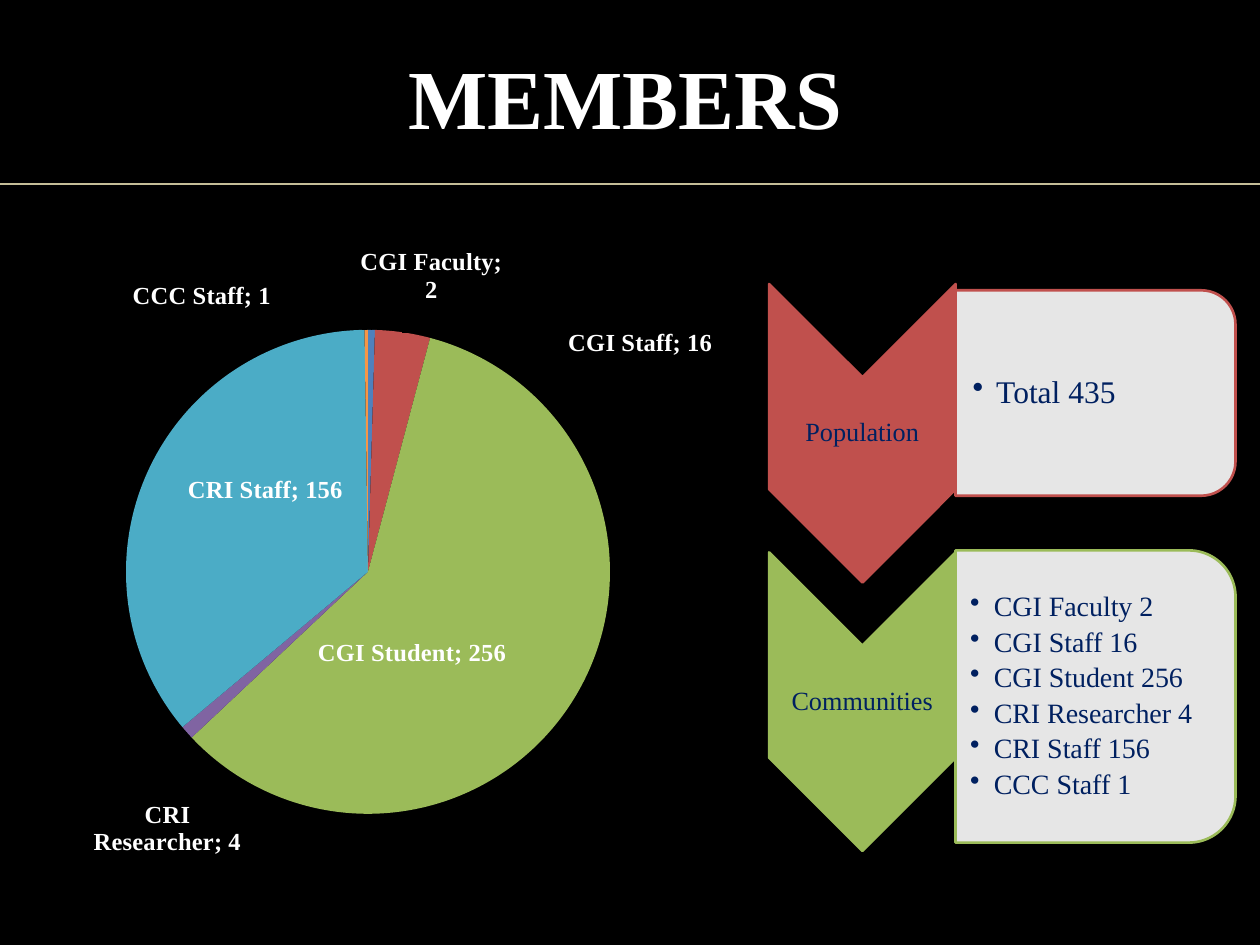
from pptx import Presentation
from pptx.chart.data import CategoryChartData
from pptx.dml.color import RGBColor
from pptx.enum.chart import XL_CHART_TYPE, XL_LABEL_POSITION
from pptx.enum.shapes import MSO_CONNECTOR, MSO_SHAPE
from pptx.enum.text import MSO_ANCHOR, PP_ALIGN
from pptx.oxml import parse_xml
from pptx.oxml.ns import nsdecls, qn
from pptx.util import Pt
from lxml.etree import SubElement

FACE = "Times New Roman"
NAVY, WHITE = "002060", "FFFFFF"
OUT, MID = XL_LABEL_POSITION.OUTSIDE_END, XL_LABEL_POSITION.CENTER
SLICES = [
    ("CGI Faculty", 2, "4F81BD", OUT, 0.08, -0.03),
    ("CGI Staff", 16, "C0504D", OUT, 0.22, 0.05),
    ("CGI Student", 256, "9BBB59", MID, -0.08, 0.03),
    ("CRI Researcher", 4, "8064A2", OUT, 0.08, 0.1),
    ("CRI Staff", 156, "4BACC6", MID, 0.01, -0.05),
    ("CCC Staff", 1, "F79646", OUT, -0.22, -0.02),
]


def paint(color, code):
    color.rgb = RGBColor.from_string(code)


def apply(item, form):
    for name, value in form.items():
        setattr(item, name, value)


def style(font, size, code, bold=False):
    apply(font, {"name": FACE, "size": Pt(size), "bold": bold})
    paint(font.color, code)


def layout(x, y, w=None, h=None):
    tags = ""
    if w:
        tags = '<c:layoutTarget val="inner"/><c:xMode val="edge"/><c:yMode val="edge"/>'
    for name, value in zip("xywh", (x, y, w, h)):
        if value is not None:
            tags += f'<c:{name} val="{value}"/>'
    return parse_xml(f'<c:layout {nsdecls("c")}><c:manualLayout>{tags}'
                     '</c:manualLayout></c:layout>')


def add_title(slide, text):
    title = slide.shapes.title
    apply(title, {"left": Pt(54), "top": Pt(21), "width": Pt(607), "height": Pt(68)})
    frame = title.text_frame
    apply(frame, {"text": text, "vertical_anchor": MSO_ANCHOR.MIDDLE})
    para = frame.paragraphs[0]
    apply(para, {"alignment": PP_ALIGN.CENTER, "space_before": Pt(4)})
    style(para.runs[0].font, 48, WHITE, True)


def add_rule(slide, y):
    rule = slide.shapes.add_connector(MSO_CONNECTOR.STRAIGHT, 0, Pt(y), Pt(720), Pt(y))
    rule.line.width = Pt(1)
    paint(rule.line.color, "C4BD97")
    SubElement(rule.element.spPr, qn("a:effectLst"))


def add_pie(slide):
    data = CategoryChartData()
    data.categories = [row[0] for row in SLICES]
    data.add_series("Series 1", [row[1] for row in SLICES])
    chart = slide.shapes.add_chart(XL_CHART_TYPE.PIE, Pt(1.5), Pt(139.5),
                                   Pt(427), Pt(363), data).chart
    apply(chart, {"has_legend": False, "has_title": False})
    style(chart.font, 20, WHITE)
    plot = chart.plots[0]
    apply(plot, {"vary_by_categories": True, "has_data_labels": True})
    labels = plot.data_labels
    apply(labels, {"show_value": True, "show_category_name": True,
                   "show_percentage": False})
    style(labels.font, 14, WHITE, True)
    for i, (_, _, code, spot, _, _) in enumerate(SLICES):
        point = plot.series[0].points[i]
        point.format.fill.solid()
        paint(point.format.fill.fore_color, code)
        point.data_label.position = spot
        style(point.data_label.font, 14, WHITE, True)
    for label, row in zip(chart.element.xpath(".//c:dLbl"), SLICES):
        label.insert(1, layout(*row[4:]))
        label.find(qn("c:showCatName")).set("val", "1")
        SubElement(label, qn("c:separator")).text = "; "
    area = chart.element.xpath(".//c:plotArea")[0]
    for old in area.findall(qn("c:layout")):
        area.remove(old)
    area.insert(0, layout(0.165, 0.135, 0.648, 0.762))


def add_turned(slide, kind, x, y, w, h, fill, line):
    shape = slide.shapes.add_shape(kind, Pt(x - w / 2), Pt(y - h / 2), Pt(w), Pt(h))
    shape.rotation = 90
    shape.shadow.inherit = False
    shape.fill.solid()
    paint(shape.fill.fore_color, fill)
    paint(shape.line.color, line)
    shape.line.width = Pt(1.5)
    return shape


def fade(shape, part):
    tint = shape.element.spPr.find(qn("a:solidFill"))[0]
    SubElement(tint, qn("a:alpha")).set("val", str(part * 1000))


def add_text(slide, x, y, w, h, lines, size, inset=1, bullet=False):
    box = slide.shapes.add_textbox(Pt(x), Pt(y - h / 2), Pt(w), Pt(h))
    frame = box.text_frame
    apply(frame, {"word_wrap": True, "vertical_anchor": MSO_ANCHOR.MIDDLE,
                  "margin_left": Pt(inset), "margin_right": Pt(1),
                  "margin_top": Pt(1), "margin_bottom": Pt(1),
                  "text": "\n".join(lines)})
    for para in frame.paragraphs:
        apply(para, {"line_spacing": 0.9, "space_after": Pt(3),
                     "alignment": PP_ALIGN.LEFT if bullet else PP_ALIGN.CENTER})
        style(para.runs[0].font, size, NAVY)
        if bullet:
            para.level = 1
            props = para._p.get_or_add_pPr()
            props.set("marL", str(Pt(13.5)))
            props.set("indent", str(-Pt(13.5)))
            SubElement(props, qn("a:buChar")).set("char", "•")


def add_step(slide, y, name, code, mid, tall, lines, size, inset):
    add_turned(slide, MSO_SHAPE.CHEVRON, 492.8, y, 170.6, 106.6, code, code)
    add_text(slide, 439.4, y, 106.6, 64, [name], 15)
    card = add_turned(slide, MSO_SHAPE.ROUND_2_SAME_RECTANGLE, 626, mid,
                      tall, 160, WHITE, code)
    fade(card, 90)
    add_text(slide, 545.8, mid, 153, tall - 13, lines, size, inset, True)


def main():
    deck = Presentation()
    apply(deck, {"slide_width": Pt(720), "slide_height": Pt(540)})
    slide = deck.slides.add_slide(deck.slide_layouts[5])
    slide.background.fill.solid()
    paint(slide.background.fill.fore_color, "000000")
    add_rule(slide, 105)
    add_step(slide, 247.6, "Population", "C0504D", 224.6, 117.4,
             ["Total 435"], 18, 10)
    add_step(slide, 401, "Communities", "9BBB59", 398, 167,
             [f"{row[0]} {row[1]}" for row in SLICES], 16, 8.6)
    add_title(slide, "MEMBERS")
    add_pie(slide)
    deck.save("out.pptx")


if __name__ == "__main__":
    main()
